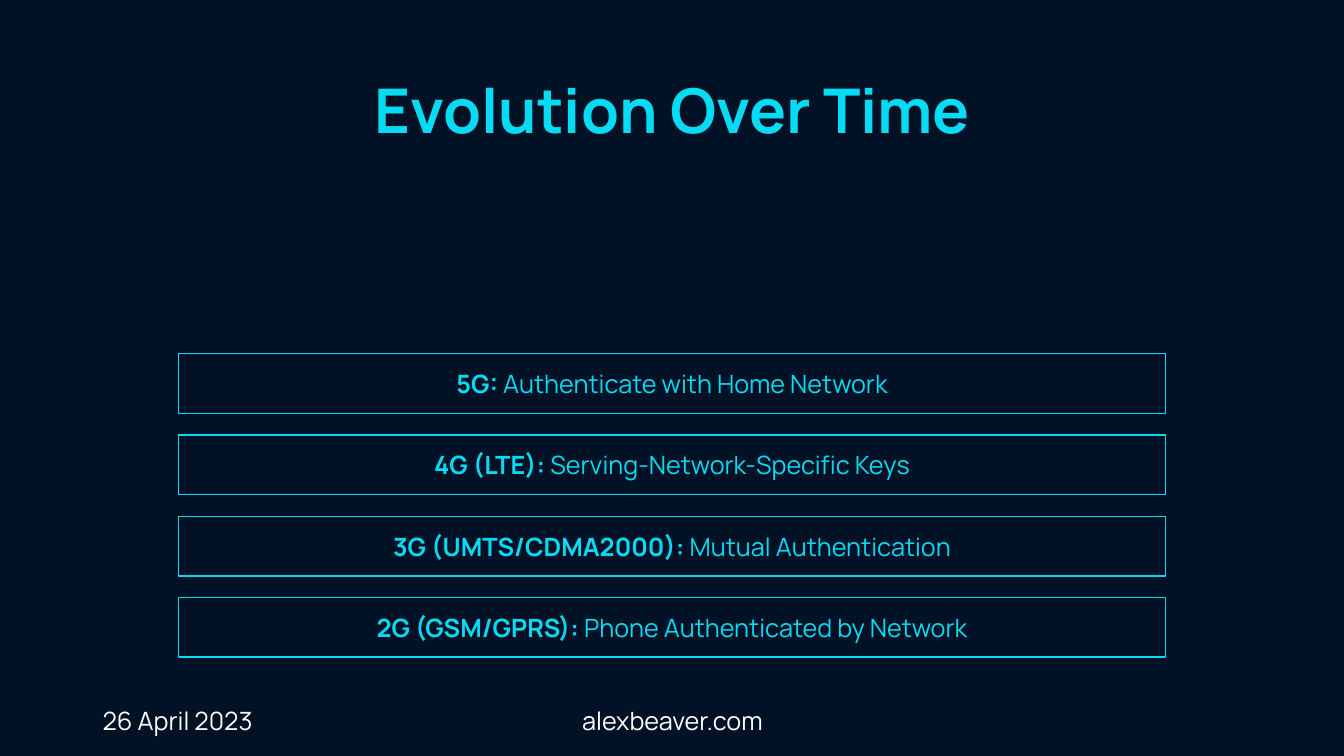
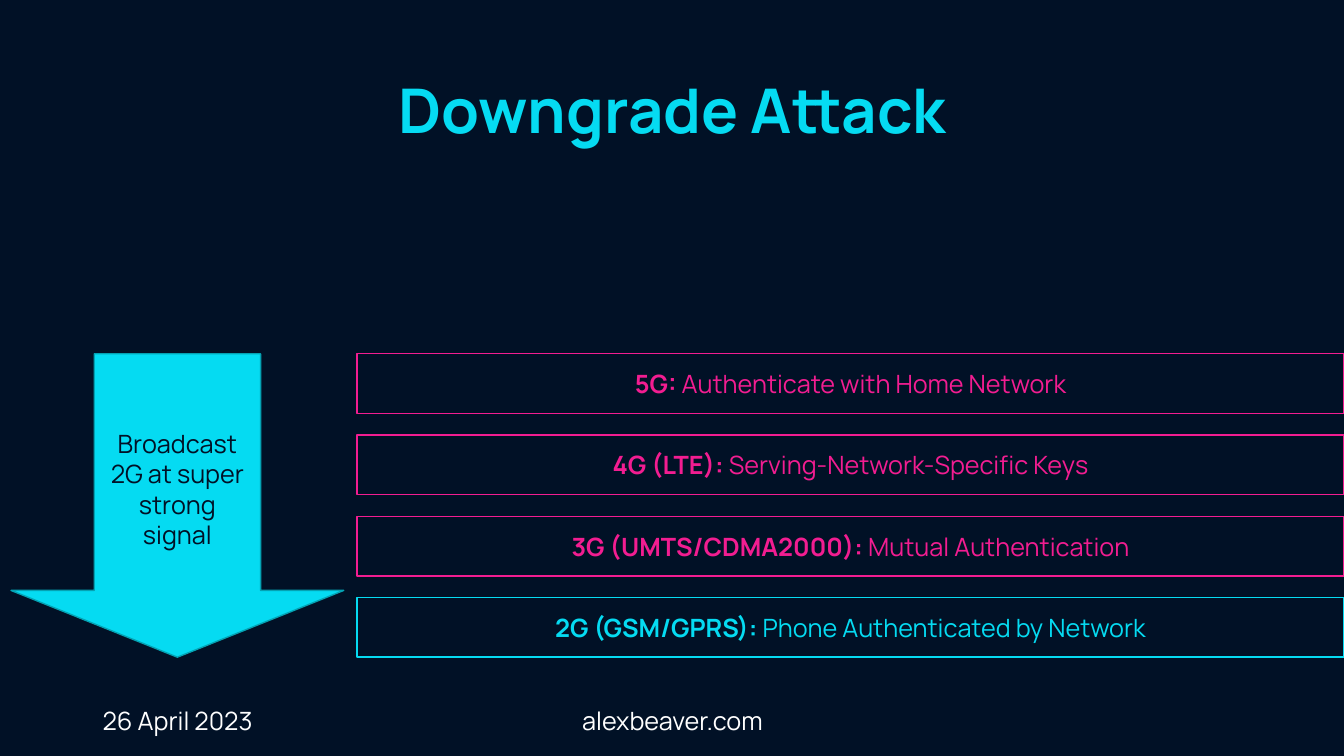
"""Build two slides on mobile network generations and the downgrade attack."""
from pptx import Presentation
from pptx.dml.color import RGBColor
from pptx.enum.shapes import MSO_SHAPE
from pptx.enum.text import MSO_ANCHOR, MSO_AUTO_SIZE, PP_ALIGN
from pptx.util import Inches, Pt

RECT, ARROW = MSO_SHAPE.RECTANGLE, MSO_SHAPE.DOWN_ARROW
LEFT, CENTER = PP_ALIGN.LEFT, PP_ALIGN.CENTER
MIDDLE, FIXED = MSO_ANCHOR.MIDDLE, MSO_AUTO_SIZE.NONE

NAVY, CYAN, PINK, TEAL, WHITE = "011126", "05DBF2", "F21D91", "04A2B3", "FFFFFF"
WIDE, HIGH = 13.33, 7.5
TITLE = (0.92, 0.4, 11.5, 1.45)
FEET = [
    ("26 April 2023", (0.92, 6.95, 3, 0.4), LEFT),
    ("alexbeaver.com", (4.42, 6.95, 4.5, 0.4), CENTER),
]
STEPS = [
    ("5G: ", "Authenticate with Home Network"),
    ("4G (LTE): ", "Serving-Network-Specific Keys"),
    ("3G (UMTS/CDMA2000): ", "Mutual Authentication"),
    ("2G (GSM/GPRS): ", "Phone Authenticated by Network"),
]
CALL = ["Broadcast", "2G at super strong signal"]
BAR_W, BAR_H, TOP, END = 9.79, 0.59, 3.51, 6.52
PITCH = (END - TOP - BAR_H) / (len(STEPS) - 1)
SLIDES = [
    {"title": "Evolution Over Time", "left": (WIDE - BAR_W) / 2,
     "hues": [CYAN] * 4, "call": None},
    {"title": "Downgrade Attack", "left": WIDE - BAR_W,
     "hues": [PINK] * 3 + [CYAN], "call": CALL},
]


def color(code):
    """Turn a hex string into a colour."""
    return RGBColor.from_string(code)


def area(box):
    """Turn inches into lengths."""
    return [Inches(n) for n in box]


def write(shape, paras, hue, size=18, align=CENTER, space=None):
    """Fill a shape with paragraphs of (text, bold) runs."""
    frame = shape.text_frame
    look = {"word_wrap": True, "auto_size": FIXED, "vertical_anchor": MIDDLE}
    for key, value in look.items():
        setattr(frame, key, value)
    for i, runs in enumerate(paras):
        para = frame.add_paragraph() if i else frame.paragraphs[0]
        para.alignment, para.line_spacing = align, space
        for text, bold in runs:
            run = para.add_run()
            run.text = text
            style = {"name": "Manrope", "size": Pt(size), "bold": bold}
            for key, value in style.items():
                setattr(run.font, key, value)
            run.font.color.rgb = color(hue)


def draw(slide, kind, box, line, fill=None):
    """Add an outlined shape, filled or hollow."""
    shape = slide.shapes.add_shape(kind, *area(box))
    shape.shadow.inherit = False
    shape.line.color.rgb, shape.line.width = color(line), Pt(1)
    if fill:
        shape.fill.solid()
        shape.fill.fore_color.rgb = color(fill)
    else:
        shape.fill.background()
    return shape


def frame(deck, title):
    """Add a slide with its title and footers."""
    slide = deck.slides.add_slide(deck.slide_layouts[5])
    head = slide.shapes.title
    head.left, head.top, head.width, head.height = area(TITLE)
    write(head, [[(title, True)]], CYAN, 44, space=0.9)
    for text, box, align in FEET:
        foot = slide.shapes.add_textbox(*area(box))
        write(foot, [[(text, False)]], WHITE, align=align)
    return slide


def main():
    """Build and save the deck."""
    deck = Presentation()
    deck.slide_width, deck.slide_height = area((WIDE, HIGH))
    back = deck.slide_master.background.fill
    back.solid()
    back.fore_color.rgb = color(NAVY)
    for page in SLIDES:
        slide = frame(deck, page["title"])
        left = page["left"]
        for i, ((name, gain), hue) in enumerate(zip(STEPS, page["hues"])):
            bar = draw(slide, RECT, (left, TOP + i * PITCH, BAR_W, BAR_H), hue)
            write(bar, [[(name, True), (gain, False)]], hue)
        if page["call"]:
            box = (0.11, TOP, 3.3, END - TOP)
            arrow = draw(slide, ARROW, box, TEAL, CYAN)
            arrow.adjustments[0], arrow.adjustments[1] = 0.5, 0.22
            write(arrow, [[(text, False)] for text in page["call"]], NAVY)
    deck.save("out.pptx")


if __name__ == "__main__":
    main()
